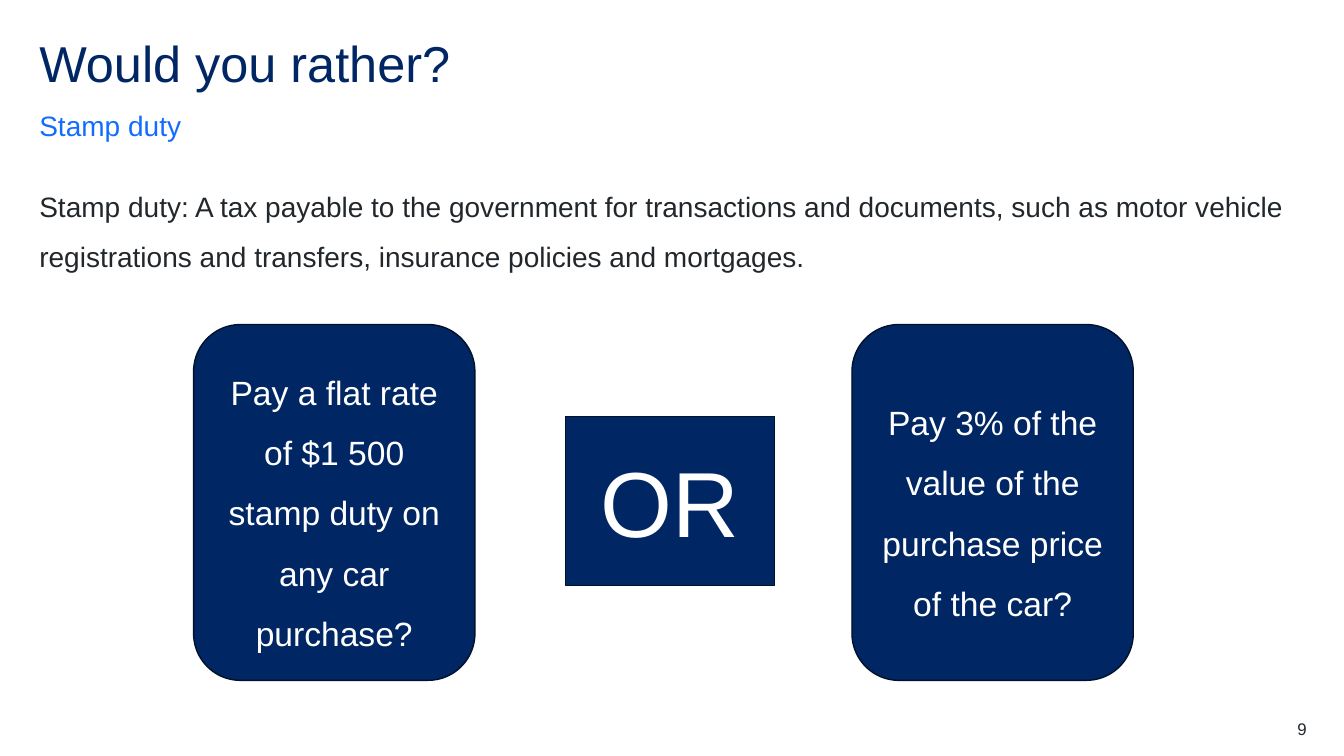
from dataclasses import dataclass

from pptx import Presentation
from pptx.dml.color import RGBColor
from pptx.enum.shapes import MSO_SHAPE as Preset
from pptx.enum.text import MSO_ANCHOR as Anchor, MSO_AUTO_SIZE as AutoSize, PP_ALIGN as Align
from pptx.util import Inches, Pt


@dataclass(frozen=True)
class Theme:
    font: str = "Arial"
    navy: RGBColor = RGBColor(0x00, 0x26, 0x64)
    outline: RGBColor = RGBColor(0x00, 0x11, 0x2C)
    blue: RGBColor = RGBColor(0x14, 0x6C, 0xFD)
    ink: RGBColor = RGBColor(0x22, 0x27, 0x2B)
    white: RGBColor = RGBColor(0xFF, 0xFF, 0xFF)
    title: int = 36
    body: int = 20
    choice: int = 24
    divider: int = 66
    number: int = 12


THEME = Theme()
MARGIN, CONTENT_WIDTH = 0.39, 12.56
CHOICE_TOP, CHOICE_WIDTH, CHOICE_HEIGHT = 3.22, 2.79, 3.53


def write(frame, text, size, color, align=Align.LEFT, spacing=1.0, after=0, anchor=Anchor.TOP):
    """Fill a text frame with one formatted paragraph."""
    frame.word_wrap = True
    frame.auto_size = AutoSize.NONE
    frame.vertical_anchor = anchor
    frame.text = text
    paragraph = frame.paragraphs[0]
    paragraph.alignment = align
    paragraph.line_spacing = spacing
    paragraph.space_after = Pt(after)
    font = paragraph.font
    font.name, font.size, font.color.rgb = THEME.font, Pt(size), color


def clear_insets(frame):
    frame.margin_left = frame.margin_top = frame.margin_right = frame.margin_bottom = 0


def add_title(slide, text):
    title = slide.shapes.title
    title.left, title.top = Inches(MARGIN), Inches(MARGIN)
    title.width, title.height = Inches(CONTENT_WIDTH), Inches(0.6)
    clear_insets(title.text_frame)
    write(title.text_frame, text, THEME.title, THEME.navy, spacing=0.9)


def add_text(slide, box, text, size, color, **style):
    frame = slide.shapes.add_textbox(*map(Inches, box)).text_frame
    clear_insets(frame)
    write(frame, text, size, color, **style)


def add_panel(slide, preset, box, text, size, spacing=1.0):
    panel = slide.shapes.add_shape(preset, *map(Inches, box))
    panel.shadow.inherit = False
    panel.fill.solid()
    panel.fill.fore_color.rgb = THEME.navy
    panel.line.color.rgb = THEME.outline
    panel.line.width = Pt(1)
    write(panel.text_frame, text, size, THEME.white, align=Align.CENTER,
          spacing=spacing, anchor=Anchor.MIDDLE)


def main():
    deck = Presentation()
    deck.slide_width, deck.slide_height = Inches(13.33), Inches(7.5)
    slide = deck.slides.add_slide(deck.slide_layouts.get_by_name("Title Only"))

    # Heading and definition
    add_title(slide, "Would you rather?")
    add_text(slide, (MARGIN, 1.07, CONTENT_WIDTH, 0.34), "Stamp duty",
             THEME.body, THEME.blue, spacing=1.5, after=12, anchor=Anchor.BOTTOM)
    add_text(slide, (MARGIN, 1.71, CONTENT_WIDTH, 5.26),
             "Stamp duty: A tax payable to the government for transactions and documents, "
             "such as motor vehicle registrations and transfers, insurance policies and mortgages.",
             THEME.body, THEME.ink, spacing=1.5, after=12)

    # Two choices with the divider between them
    choices = (
        (1.92, "Pay a flat rate of $1 500 stamp duty on any car purchase?"),
        (8.45, "Pay 3% of the value of the purchase price of the car?"),
    )
    for left, question in choices:
        add_panel(slide, Preset.ROUNDED_RECTANGLE,
                  (left, CHOICE_TOP, CHOICE_WIDTH, CHOICE_HEIGHT),
                  question, THEME.choice, spacing=1.5)
    add_panel(slide, Preset.RECTANGLE, (5.61, 4.13, 2.07, 1.68), "OR", THEME.divider)

    # Page number
    add_text(slide, (12.17, 7.13, 0.79, 0.2), "9", THEME.number, THEME.ink, align=Align.RIGHT)

    deck.save("out.pptx")


if __name__ == "__main__":
    main()
